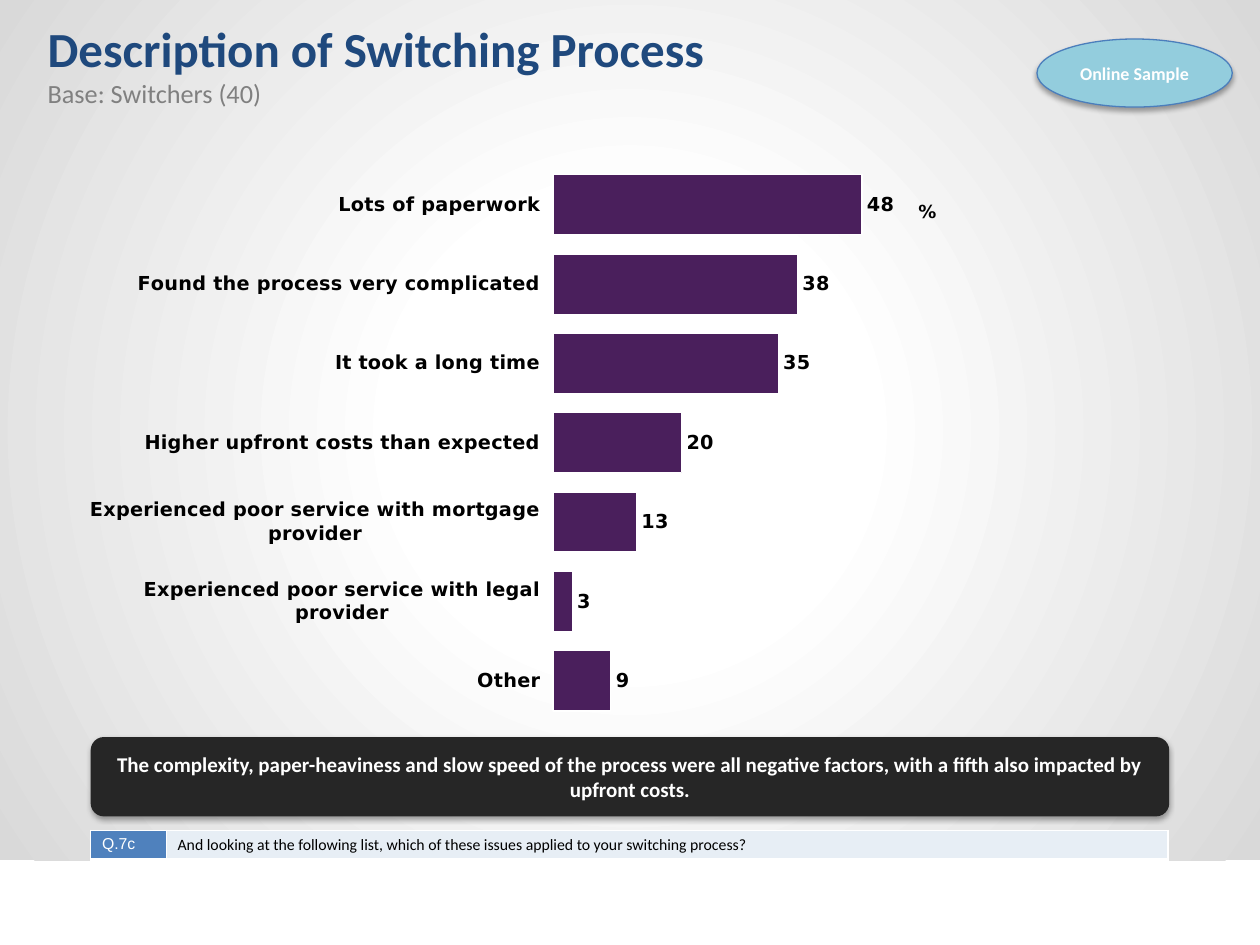
from lxml.etree import SubElement
from pptx import Presentation
from pptx.chart.data import CategoryChartData
from pptx.dml.color import RGBColor
from pptx.enum.chart import XL_CHART_TYPE, XL_LABEL_POSITION, XL_TICK_MARK
from pptx.enum.shapes import MSO_SHAPE
from pptx.enum.text import MSO_ANCHOR, PP_ALIGN
from pptx.oxml import parse_xml
from pptx.oxml.ns import nsdecls, qn
from pptx.util import Inches, Pt

HEX = {"white": "FFFFFF", "edge": "D9D9D9", "navy": "1F497D", "grey": "808080",
       "black": "000000", "bar": "4A1F5C", "dark": "262626", "oval": "93CDDD",
       "rim": "4B7EBC", "code": "4F81BD", "ask": "E7EEF5"}
TITLE = "Description of Switching Process"
BASE = "Base: Switchers (40)"
ISSUES = [
    ("Lots of paperwork", 48),
    ("Found the process very complicated", 38),
    ("It took a long time", 35),
    ("Higher upfront costs than expected", 20),
    ("Experienced poor service with mortgage provider", 13),
    ("Experienced poor service with legal provider", 3),
    ("Other", 9),
]
NOTE = ("The complexity, paper-heaviness and slow speed of the process were all "
        "negative factors, with a fifth also impacted by upfront costs.")
# text, font, text colour, fill, column width
QUERY = [
    ("Q.7c", "Arial", "white", "code", 0.6),
    ("And looking at the following list, which of these issues applied to your "
     "switching process?", "Calibri", "black", "ask", 7.95),
]
EDGES = {"lnL": 1, "lnR": 1, "lnT": 1, "lnB": 3}
WIDE, HIGH = 10, 7.5
SIDE = 0.72
BAND = WIDE - 2 * SIDE
PLOT = {"x": 0.432, "y": 0.028, "w": 0.568, "h": 0.944}

deck = Presentation()
deck.slide_width, deck.slide_height = Inches(WIDE), Inches(HIGH)
slide = deck.slides.add_slide(deck.slide_layouts[6])
shapes = slide.shapes


def tint(name):
    return RGBColor.from_string(HEX[name])


def style(font, size, color, bold=False, face="Calibri"):
    font.size, font.bold, font.name = Pt(size), bold, face
    font.color.rgb = tint(color)


def write(para, text, *look):
    run = para.add_run()
    run.text = text
    style(run.font, *look)


def text_box(*area):
    frame = shapes.add_textbox(*map(Inches, area)).text_frame
    frame.word_wrap = True
    return frame


def panel(kind, area, fill, rim=None):
    shape = shapes.add_shape(kind, *map(Inches, area))
    shape.shadow.inherit = False
    shape.fill.solid()
    shape.fill.fore_color.rgb = tint(fill)
    if rim:
        shape.line.color.rgb = tint(rim)
        shape.line.width = Pt(0.75)
    else:
        shape.line.fill.background()
    return shape


def badge(kind, area, fill, text, size, rim=None):
    """Panel with a soft shadow below and bold white centred text."""
    shape = panel(kind, area, fill, rim)
    glow = SubElement(shape.element.spPr.find(qn("a:effectLst")), qn("a:outerShdw"),
                      blurRad=str(Pt(3.1)), dist=str(Pt(1.8)), dir="5400000",
                      rotWithShape="0")
    color = SubElement(glow, qn("a:srgbClr"), val=HEX["black"])
    SubElement(color, qn("a:alpha"), val="35000")
    frame = shape.text_frame
    frame.word_wrap, frame.vertical_anchor = True, MSO_ANCHOR.MIDDLE
    para = frame.paragraphs[0]
    para.alignment = PP_ALIGN.CENTER
    write(para, text, size, "white", True)


def backdrop():
    props = panel(MSO_SHAPE.RECTANGLE, (0, 0, WIDE, 6.83), "white").element.spPr
    stops = "".join(f'<a:gs pos="{pos}000"><a:srgbClr val="{HEX[name]}"/></a:gs>'
                    for pos, name in ((30, "white"), (100, "edge")))
    half = " ".join(f'{side}="50000"' for side in "ltrb")
    props.replace(props.find(qn("a:solidFill")), parse_xml(
        f'<a:gradFill {nsdecls("a")} rotWithShape="1"><a:gsLst>{stops}</a:gsLst>'
        f'<a:path path="circle"><a:fillToRect {half}/></a:path></a:gradFill>'))


def heading():
    frame = text_box(0.28, 0.18, 7.81, 0.73)
    frame.vertical_anchor = MSO_ANCHOR.BOTTOM
    para = frame.paragraphs[0]
    write(para, TITLE, 28, "navy", True)
    para.add_line_break()
    write(para, BASE, 15, "grey")


def bars():
    data = CategoryChartData(number_format="0")
    data.categories = [name for name, _ in ISSUES]
    data.add_series("Series 1", [value for _, value in ISSUES])
    chart = shapes.add_chart(XL_CHART_TYPE.BAR_CLUSTERED,
                             *map(Inches, (0.5, 1.18, 9, 4.67)), data).chart
    chart.has_legend = chart.has_title = False
    style(chart.font, 18, "black")

    names, scale = chart.category_axis, chart.value_axis
    names.reverse_order = True
    names.major_tick_mark = XL_TICK_MARK.OUTSIDE
    names.format.line.fill.background()
    style(names.tick_labels.font, 11, "black", True, "DejaVu Sans")
    scale.minimum_scale, scale.maximum_scale = 0, 100
    scale.has_major_gridlines = scale.visible = False

    plot = chart.plots[0]
    plot.gap_width, plot.vary_by_categories = 32, False
    form = plot.series[0].format
    form.fill.solid()
    form.fill.fore_color.rgb = tint("bar")
    form.line.color.rgb = tint("white")
    form.line.width = Pt(0.75)
    plot.has_data_labels = True
    labels = plot.data_labels
    labels.show_value, labels.position = True, XL_LABEL_POSITION.OUTSIDE_END
    labels.number_format, labels.number_format_is_linked = "0", False
    style(labels.font, 11, "black", True, "DejaVu Sans")

    area = chart.element.chart.plotArea
    for old in area.findall(qn("c:layout")):
        area.remove(old)
    rules = '<c:layoutTarget val="inner"/><c:xMode val="edge"/><c:yMode val="edge"/>'
    rules += "".join(f'<c:{key} val="{val}"/>' for key, val in PLOT.items())
    area.insert(0, parse_xml(f'<c:layout {nsdecls("c")}><c:manualLayout>{rules}'
                             '</c:manualLayout></c:layout>'))


def unit():
    para = text_box(7.09, 1.54, 0.54, 0.27).paragraphs[0]
    para.alignment = PP_ALIGN.CENTER
    write(para, "%", 10.3, "black", True, "DejaVu Sans")


def question():
    area = map(Inches, (SIDE, 6.59, BAND, 0.24))
    table = shapes.add_table(1, len(QUERY), *area).table
    for col, (text, face, color, fill, width) in enumerate(QUERY):
        table.columns[col].width = Inches(width)
        cell = table.cell(0, col)
        cell.margin_left = cell.margin_right = Inches(0.09)
        cell.margin_top = cell.margin_bottom = Inches(0.04)
        props = cell._tc.get_or_add_tcPr()
        for edge, size in EDGES.items():
            line = SubElement(props, qn(f"a:{edge}"), w=str(Pt(size)))
            SubElement(SubElement(line, qn("a:solidFill")), qn("a:srgbClr"),
                       val=HEX["white"])
        cell.fill.solid()
        cell.fill.fore_color.rgb = tint(fill)
        write(cell.text_frame.paragraphs[0], text, 9, color, False, face)


backdrop()
heading()
bars()
unit()
question()
badge(MSO_SHAPE.ROUNDED_RECTANGLE, (SIDE, 5.85, BAND, 0.63), "dark", NOTE, 12)
badge(MSO_SHAPE.OVAL, (8.23, 0.31, 1.55, 0.54), "oval", "Online Sample", 10.3, "rim")
deck.save("out.pptx")
